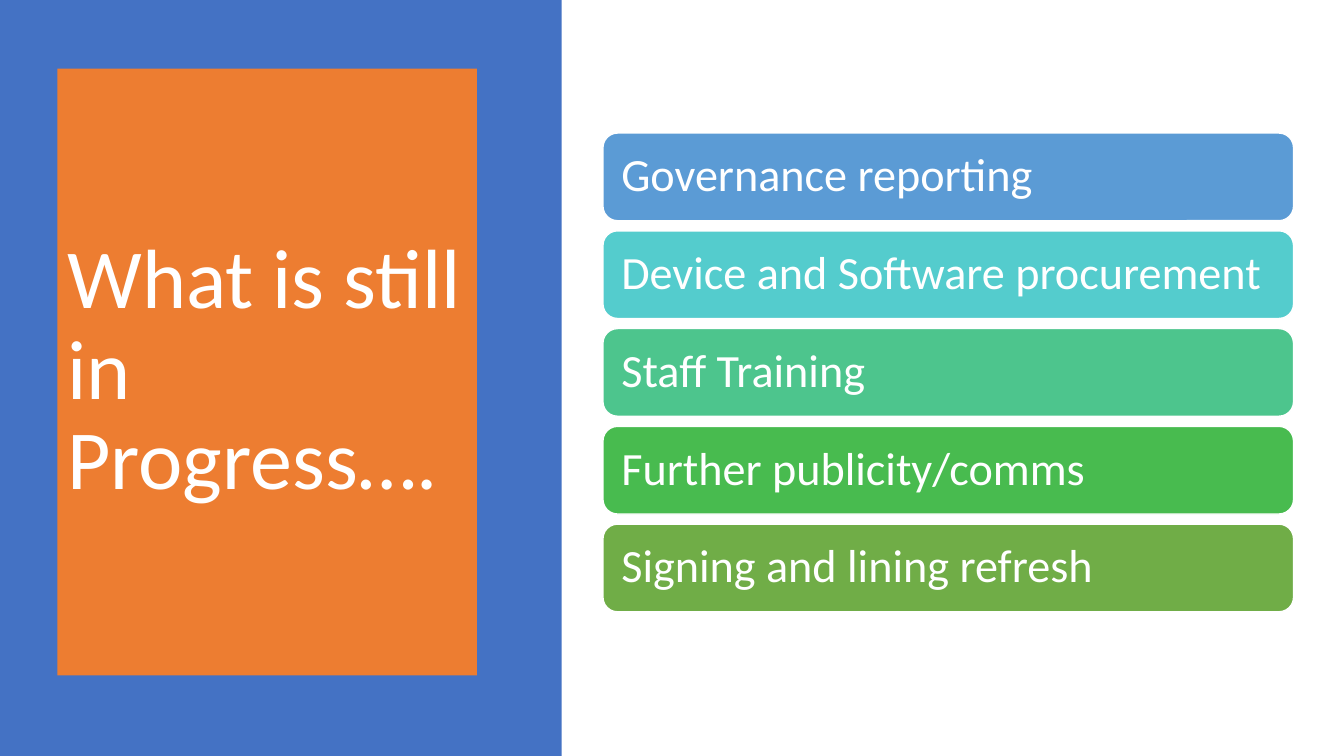
from pptx import Presentation
from pptx import util as u
from pptx.dml.color import RGBColor
from pptx.enum import shapes, text

COLORS = {
    "panel": "4472C4",
    "title": "ED7D31",
    "white": "FFFFFF",
    "Governance reporting": "5B9BD5",
    "Device and Software procurement": "54CCCD",
    "Staff Training": "4DC58D",
    "Further publicity/comms": "48BB4F",
    "Signing and lining refresh": "70AD47",
}
TASKS = [
    "Governance reporting",
    "Device and Software procurement",
    "Staff Training",
    "Further publicity/comms",
    "Signing and lining refresh",
]


def add_box(page, left, top, width, height, fill, rounded=False):
    kind = shapes.MSO_SHAPE.ROUNDED_RECTANGLE if rounded else shapes.MSO_SHAPE.RECTANGLE
    box = page.shapes.add_shape(
        kind, u.Inches(left), u.Inches(top), u.Inches(width), u.Inches(height)
    )
    box.shadow.inherit = False
    box.fill.solid()
    box.fill.fore_color.rgb = RGBColor.from_string(COLORS[fill])
    if rounded:
        box.line.color.rgb = RGBColor.from_string(COLORS["white"])
        box.line.width = u.Pt(1)
    else:
        box.line.fill.background()
    return box


def write(box, words, size, inset):
    frame = box.text_frame
    frame.word_wrap = True
    frame.vertical_anchor = text.MSO_ANCHOR.MIDDLE
    frame.margin_left = frame.margin_right = u.Inches(inset)
    para = frame.paragraphs[0]
    para.alignment = text.PP_ALIGN.LEFT
    para.line_spacing = 0.9
    span = para.add_run()
    span.text = words
    span.font.name = "Calibri"
    span.font.size = u.Pt(size)
    span.font.color.rgb = RGBColor.from_string(COLORS["white"])


deck = Presentation()
deck.slide_width = u.Inches(13.33)
deck.slide_height = u.Inches(7.5)
page = deck.slides.add_slide(deck.slide_layouts[6])

add_box(page, 0, 0, 5.57, 7.5, "panel")
title = add_box(page, 0.57, 0.68, 4.16, 6.02, "title")
write(title, "What is still in Progress….", size=60, inset=0.1)

for row, task in enumerate(TASKS):
    bar = add_box(page, 5.98, 1.32 + row * 0.97, 6.85, 0.87, task, rounded=True)
    write(bar, task, size=33, inset=0.14)

deck.save("out.pptx")
